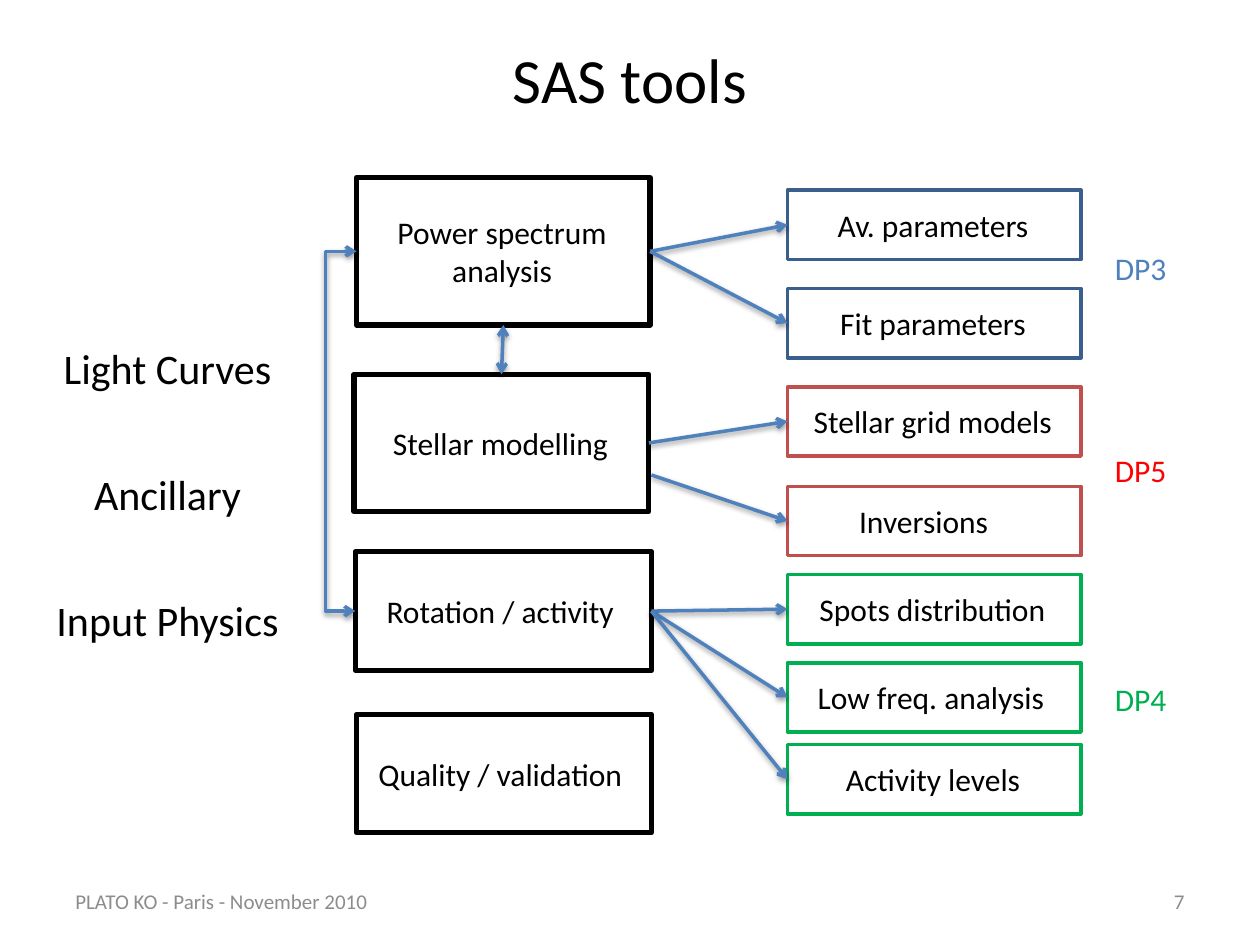
import pptx
import pptx.dml.color
import pptx.enum.shapes
import pptx.enum.text
import pptx.oxml
import pptx.oxml.ns
import pptx.util

# The slide is a grid of 100 columns by 75 rows; boxes are (left, top, width, height).
COLUMNS, ROWS = 100, 75
BLACK, BLUE, NAVY, CRIMSON, RED, GREEN, GREY = (
    "000000", "4F81BD", "3A5F8C", "C0504D", "FF0000", "00B050", "8C8C8C")
TOP, LEFT, BOTTOM, RIGHT = range(4)
ALIGN = pptx.enum.text.PP_ALIGN
ANCHOR = pptx.enum.text.MSO_ANCHOR
CONNECTOR = pptx.enum.shapes.MSO_CONNECTOR
SHADOW = (
    f'<a:effectLst {pptx.oxml.ns.nsdecls("a")}>'
    '<a:outerShdw blurRad="40000" dist="20000" dir="5400000" rotWithShape="0">'
    '<a:srgbClr val="000000"><a:alpha val="38000"/></a:srgbClr>'
    '</a:outerShdw></a:effectLst>')

deck = pptx.Presentation()
deck.slide_width = pptx.util.Inches(10)
deck.slide_height = pptx.util.Inches(7.5)


def colour(value):
    return pptx.dml.color.RGBColor.from_string(value)


def across(columns):
    return round(deck.slide_width * columns / COLUMNS)


def down(rows):
    return round(deck.slide_height * rows / ROWS)


def place(box):
    left, top, width, height = box
    return across(left), down(top), across(width), down(height)


def write(shape, text, size=18, ink=BLACK, align=ALIGN.LEFT,
          anchor=ANCHOR.TOP, wrap=True, grow=True):
    frame = shape.text_frame
    frame.word_wrap = wrap
    frame.vertical_anchor = anchor
    fit = pptx.enum.text.MSO_AUTO_SIZE
    frame.auto_size = fit.SHAPE_TO_FIT_TEXT if grow else fit.NONE
    para = frame.paragraphs[0]
    para.alignment = align
    span = para.add_run()
    span.text = text
    span.font.name = "Calibri"
    span.font.size = pptx.util.Pt(size)
    span.font.color.rgb = colour(ink)


def add_text(page, box, text, **style):
    write(page.shapes.add_textbox(*place(box)), text, **style)


def add_frame(page, box, ink, weight):
    frame = page.shapes.add_shape(
        pptx.enum.shapes.MSO_SHAPE.RECTANGLE, *place(box))
    frame.shadow.inherit = False
    frame.fill.background()
    frame.line.color.rgb = colour(ink)
    frame.line.width = pptx.util.Pt(weight)
    return frame


def add_label(page, frame_box, centre, width, text, height=4, **style):
    """Write a label around the given column, halfway down a frame."""
    top = frame_box[1] + (frame_box[3] - height) / 2
    add_text(page, (centre - width / 2, top, width, height), text, **style)


def add_arrow(page, start, start_side, end, end_side,
              kind=CONNECTOR.STRAIGHT, both=False):
    arrow = page.shapes.add_connector(kind, 0, 0, 0, 0)
    arrow.begin_connect(start, start_side)
    arrow.end_connect(end, end_side)
    arrow.line.color.rgb = colour(BLUE)
    arrow.line.width = pptx.util.Pt(2)
    line = arrow.line._get_or_add_ln()
    for tag in ("headEnd", "tailEnd") if both else ("tailEnd",):
        tip = pptx.oxml.parse_xml(
            f'<a:{tag} {pptx.oxml.ns.nsdecls("a")} type="arrow"/>')
        line.append(tip)
    arrow._element.spPr.append(pptx.oxml.parse_xml(SHADOW))
    return arrow


def add_heading(page, box):
    title = page.shapes.title
    title.left, title.top, title.width, title.height = place(box)
    write(title, "SAS tools", size=36, align=ALIGN.CENTER,
          anchor=ANCHOR.MIDDLE, grow=False)


def add_footer(page, top, height):
    style = dict(size=12, ink=GREY, anchor=ANCHOR.MIDDLE, grow=False)
    add_text(page, (5, top, 35, height), "PLATO KO - Paris - November 2010", **style)
    add_text(page, (71.7, top, 23.3, height), "7", align=ALIGN.RIGHT, **style)


def add_inputs(page, box):
    left, top, width, pitch = box
    for row, text in enumerate(("Light Curves", "Ancillary", "Input Physics")):
        add_text(page, (left, top + row * pitch, width, 5), text,
                 size=24, align=ALIGN.CENTER)


def add_stages(page, centre):
    """Draw the analysis stages down the middle and return their frames."""
    stages = (
        ((28.3, 14.1, 23.3, 11.7), 22.7, "Power spectrum analysis",
         dict(height=7.1, align=ALIGN.CENTER)),
        ((28.1, 29.7, 23.4, 10.9), 19.3, "Stellar modelling", dict(wrap=False)),
        ((28.2, 43.8, 23.5, 9.4), 20.3, "Rotation / activity", dict(wrap=False)),
        ((28.3, 56.7, 23.4, 9.4), 21.6, "Quality / validation", dict(wrap=False)),
    )
    frames = []
    for box, width, text, style in stages:
        frames.append(add_frame(page, box, BLACK, 3))
        add_label(page, box, centre, width, text, **style)
    return frames


def add_products(page, left, width, height):
    """Draw the output products on the right and return their frames."""
    products = (
        (15.1, NAVY, 17.3, "Av. parameters", 0),
        (22.9, NAVY, 16.9, "Fit parameters", 0),
        (30.7, CRIMSON, 21.1, "Stellar grid models", 0),
        (38.6, CRIMSON, 12.4, "Inversions", -0.75),
        (45.6, GREEN, 20.2, "Spots distribution", 0),
        (52.6, GREEN, 20.2, "Low freq. analysis", -0.15),
        (59.1, GREEN, 16, "Activity levels", 0),
    )
    frames = []
    for top, ink, label_width, text, shift in products:
        box = (left, top, width, height)
        frames.append(add_frame(page, box, ink, 2))
        add_label(page, box, left + width / 2 + shift, label_width, text, wrap=False)
    return frames


def add_codes(page, left, width):
    for top, text, ink in ((19.3, "DP3", BLUE), (35.3, "DP5", RED), (53.5, "DP4", GREEN)):
        add_text(page, (left, top, width, 4), text, ink=ink)


def add_flow(page, stages, products):
    power, modelling, rotation, _ = stages
    sources = [power] * 2 + [modelling] * 2 + [rotation] * 3
    arrows = [add_arrow(page, source, RIGHT, product, LEFT)
              for source, product in zip(sources, products)]
    # The inversions arrow leaves below the middle of the modelling frame.
    inversions = arrows[3]
    for link in inversions._element.findall(".//" + pptx.oxml.ns.qn("a:stCxn")):
        link.getparent().remove(link)
    inversions.begin_x, inversions.begin_y = across(51.7), down(37.7)

    add_arrow(page, power, BOTTOM, modelling, TOP, both=True)
    loop = add_arrow(page, power, LEFT, rotation, LEFT,
                     kind=CONNECTOR.ELBOW, both=True)
    bend = round(across(2.5) / loop.width * 100000)
    guides = loop._element.spPr.find(pptx.oxml.ns.qn("a:prstGeom")).get_or_add_avLst()
    guides.append(pptx.oxml.parse_xml(
        f'<a:gd {pptx.oxml.ns.nsdecls("a")} name="adj1" fmla="val {bend}"/>'))


def main():
    page = deck.slides.add_slide(deck.slide_layouts.get_by_name("Title Only"))
    add_heading(page, (12.1, 0, 75.8, 12.5))
    add_footer(page, 69.5, 4)
    stages = add_stages(page, 39.85)
    add_inputs(page, (0, 26.7, 26.6, 10))
    products = add_products(page, 62.5, 23.3, 5.5)
    add_codes(page, 87.5, 8.6)
    add_flow(page, stages, products)
    deck.save("out.pptx")


if __name__ == "__main__":
    main()
